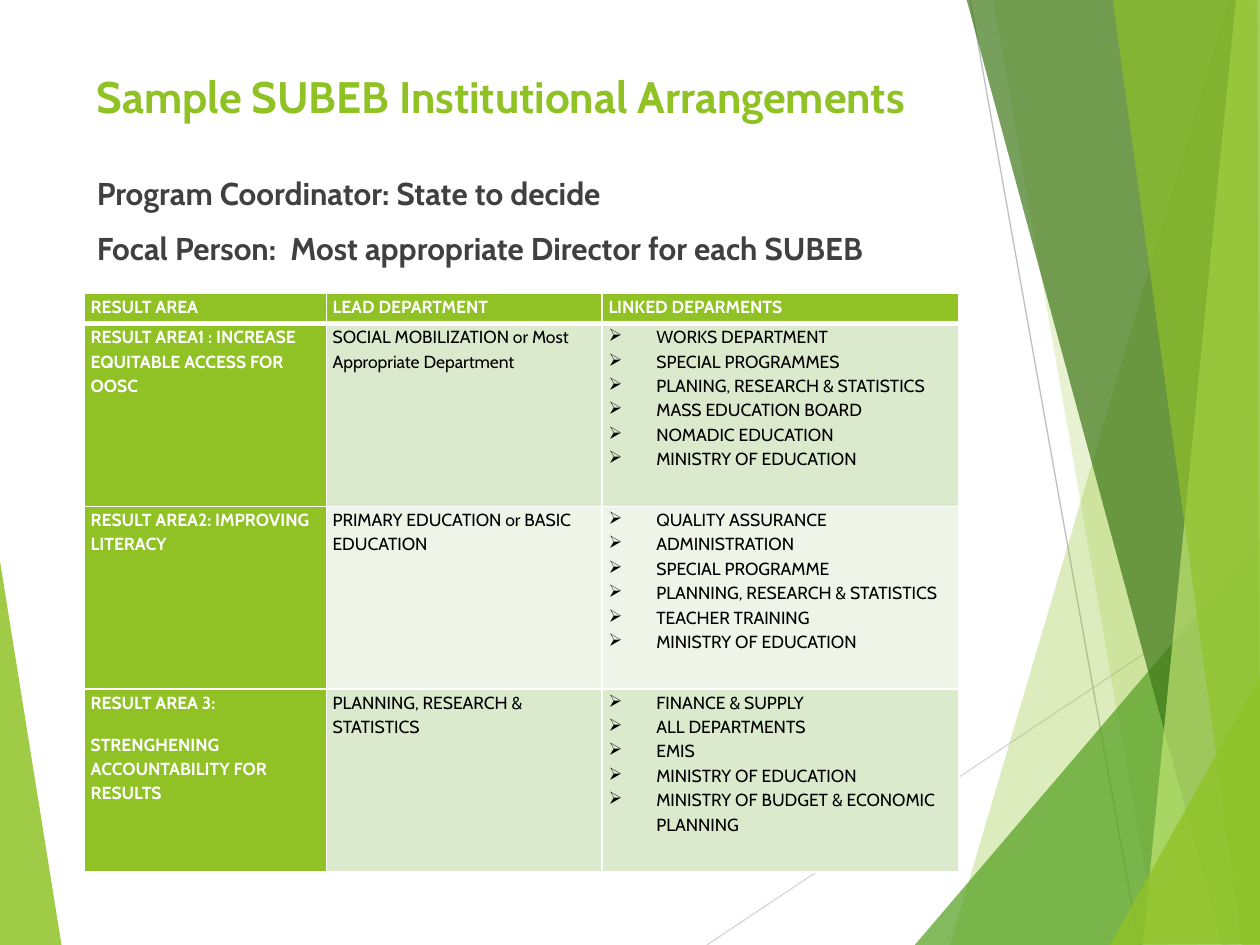
from lxml.etree import SubElement
from pptx import Presentation
from pptx.dml.color import RGBColor
from pptx.enum.text import MSO_ANCHOR
from pptx.oxml import parse_xml
from pptx.oxml.ns import nsdecls, qn
from pptx.util import Inches, Pt

COLORS = {
    "lime": "90C226", "green": "54A021", "forest": "3F7819", "pale": "C0E474",
    "white": "FFFFFF", "black": "000000", "text": "404040",
    "light_line": "D9D9D9", "line": "BFBFBF", "band": "DBE9CD", "soft_band": "EEF4E8",
}
FONT = "Cabin"
LINES = [
    ("light_line", (5.61, 7.5), (10.01, 4.57)),
    ("line", (7.7, 0), (9.04, 7.5)),
]
LEFT_FACET = ("lime", 85, [(-0.01, 4.39), (0.49, 7.51), (-0.01, 7.5)])
RIGHT_FACETS = [
    ("lime", 30, [(9.75, 0), (7.54, 7.5), (10.02, 7.51), (10.01, 0.01)]),
    ("lime", 20, [(7.88, -0.01), (9.19, 7.5), (10.01, 7.5), (10.01, -0.01)]),
    ("green", 72, [(7.26, 7.5), (10, 4.29), (10.01, 7.5)]),
    ("forest", 70, [(7.67, -0.01), (9.7, 7.5), (10.01, 7.49), (10.01, -0.01)]),
    ("pale", 70, [(9.81, -0.01), (9.07, 7.5), (10.01, 7.5), (10, -0.01)]),
    ("lime", 65, [(8.83, -0.01), (9.86, 7.5), (10, 7.5), (9.98, -0.01)]),
    ("lime", 80, [(8.81, 7.5), (10.01, 5.35), (10.01, 7.49)]),
]
HEADINGS = ["RESULT AREA", "LEAD DEPARTMENT", "LINKED DEPARMENTS"]
RESULT_AREAS = [
    (["RESULT AREA1 : INCREASE EQUITABLE ACCESS FOR OOSC"],
     "SOCIAL MOBILIZATION or Most Appropriate Department",
     ["WORKS DEPARTMENT", "SPECIAL PROGRAMMES", "PLANING, RESEARCH & STATISTICS",
      "MASS EDUCATION BOARD", "NOMADIC EDUCATION", "MINISTRY OF EDUCATION"]),
    (["RESULT AREA2: IMPROVING LITERACY"],
     "PRIMARY EDUCATION or BASIC EDUCATION",
     ["QUALITY ASSURANCE", "ADMINISTRATION", "SPECIAL PROGRAMME",
      "PLANNING, RESEARCH & STATISTICS", "TEACHER TRAINING", "MINISTRY OF EDUCATION"]),
    (["RESULT AREA 3:", "STRENGHENING ACCOUNTABILITY FOR RESULTS"],
     "PLANNING, RESEARCH & STATISTICS",
     ["FINANCE & SUPPLY", "ALL DEPARTMENTS", "EMIS", "MINISTRY OF EDUCATION",
      "MINISTRY OF BUDGET & ECONOMIC PLANNING"]),
]


def color(name):
    return RGBColor.from_string(COLORS[name])


def apply_format(target, values):
    for name, value in values.items():
        setattr(target, name, value)


def write_paragraphs(frame, texts, font_color, font_format, paragraph_format):
    for index, text in enumerate(texts):
        paragraph = frame.add_paragraph() if index else frame.paragraphs[0]
        apply_format(paragraph, paragraph_format)
        run = paragraph.add_run()
        run.text = text
        apply_format(run.font, {"name": FONT, **font_format})
        run.font.color.rgb = color(font_color)


def add_facet(slide, left, top, fill, opacity, points):
    corners = [(left + Inches(x), top + Inches(y)) for x, y in points]
    builder = slide.shapes.build_freeform(*corners[0])
    builder.add_line_segments(corners[1:], close=True)
    shape = builder.convert_to_shape()
    shape.shadow.inherit = False
    shape.line.fill.background()
    shape.fill.solid()
    shape.fill.fore_color.rgb = color(fill)
    tint = shape.fill._xPr.find(qn("a:solidFill"))[0]
    SubElement(tint, qn("a:alpha"), val=str(opacity * 1000))


def add_line(slide, left, top, line_color, start, end):
    ends = [offset + Inches(value) for point in (start, end)
            for offset, value in zip((left, top), point)]
    connector = slide.shapes.add_connector(1, *ends)
    connector.line.color.rgb = color(line_color)
    connector.line.width = Pt(0.75)
    SubElement(connector._element.spPr, qn("a:effectLst"))


def add_decoration(slide, left, top):
    add_facet(slide, left, top, *LEFT_FACET)
    for line in LINES:
        add_line(slide, left, top, *line)
    for facet in RIGHT_FACETS:
        add_facet(slide, left, top, *facet)


def add_text(slide, box, texts, font_color, size, gap=0):
    frame = slide.shapes.add_textbox(*box).text_frame
    apply_format(frame, {"word_wrap": True, "vertical_anchor": MSO_ANCHOR.TOP})
    write_paragraphs(frame, texts, font_color, {"size": Pt(size), "bold": True}, {})
    for paragraph in frame.paragraphs[1:]:
        paragraph.space_before = Pt(gap)


def set_borders(cell, widths):
    properties = cell._tc.get_or_add_tcPr()
    for index, (side, width) in enumerate(widths.items()):
        properties.insert(index, parse_xml(
            f'<a:ln{side} {nsdecls("a")} w="{Pt(width)}"><a:solidFill>'
            f'<a:srgbClr val="{COLORS["white"]}"/></a:solidFill></a:ln{side}>'))


def fill_cell(cell, texts, fill, font_color, bold=False, bullets=False, top=1, bottom=1):
    apply_format(cell, {"margin_left": Inches(0.05), "margin_right": Inches(0.05),
                        "margin_top": 0, "margin_bottom": 0})
    cell.fill.solid()
    cell.fill.fore_color.rgb = color(fill)
    set_borders(cell, {"L": 1, "R": 1, "T": top, "B": bottom})
    write_paragraphs(cell.text_frame, texts, font_color, {"size": Pt(10), "bold": bold},
                     {"line_spacing": 1.15, "space_after": Pt(0 if bullets else 10)})
    if bullets:
        for paragraph in cell.text_frame.paragraphs:
            properties = paragraph._p.get_or_add_pPr()
            properties.set("marL", str(Inches(0.38)))
            properties.set("indent", str(-Inches(0.38)))
            SubElement(properties, qn("a:buChar"), char="➢")


def add_departments_table(slide, box):
    table = slide.shapes.add_table(len(RESULT_AREAS) + 1, len(HEADINGS), *box).table
    apply_format(table, {"first_row": False, "horz_banding": False})
    for column, width in zip(table.columns, (1.92, 2.19, 2.83)):
        column.width = Inches(width)
    for row, height in zip(table.rows, (0.24, 1.45, 1.45, 1.45)):
        row.height = Inches(height)
    for index, heading in enumerate(HEADINGS):
        fill_cell(table.cell(0, index), [heading], "lime", "white", bold=True, bottom=3)
    for row, (area, lead, linked) in enumerate(RESULT_AREAS, start=1):
        band = "band" if row % 2 else "soft_band"
        top = 3 if row == 1 else 1
        fill_cell(table.cell(row, 0), area, "lime", "white", bold=True, top=top)
        fill_cell(table.cell(row, 1), [lead], band, "black", top=top)
        fill_cell(table.cell(row, 2), linked, band, "black", bullets=True, top=top)


def main():
    presentation = Presentation()
    apply_format(presentation, {"slide_width": Inches(10), "slide_height": Inches(7.5)})
    slide = presentation.slides.add_slide(presentation.slide_layouts[6])
    left, width = Inches(0.67), Inches(6.94)
    add_decoration(slide, 0, 0)
    add_text(slide, (left, Inches(0.5), width, Inches(0.75)),
             ["Sample SUBEB Institutional Arrangements"], "lime", 25.2)
    add_text(slide, (left, Inches(1.33), width, Inches(0.92)),
             ["Program Coordinator: State to decide",
              "Focal Person:  Most appropriate Director for each SUBEB"], "text", 18, gap=10)
    add_departments_table(slide, (left, Inches(2.33), width, Inches(4.59)))
    presentation.save("out.pptx")


if __name__ == "__main__":
    main()
